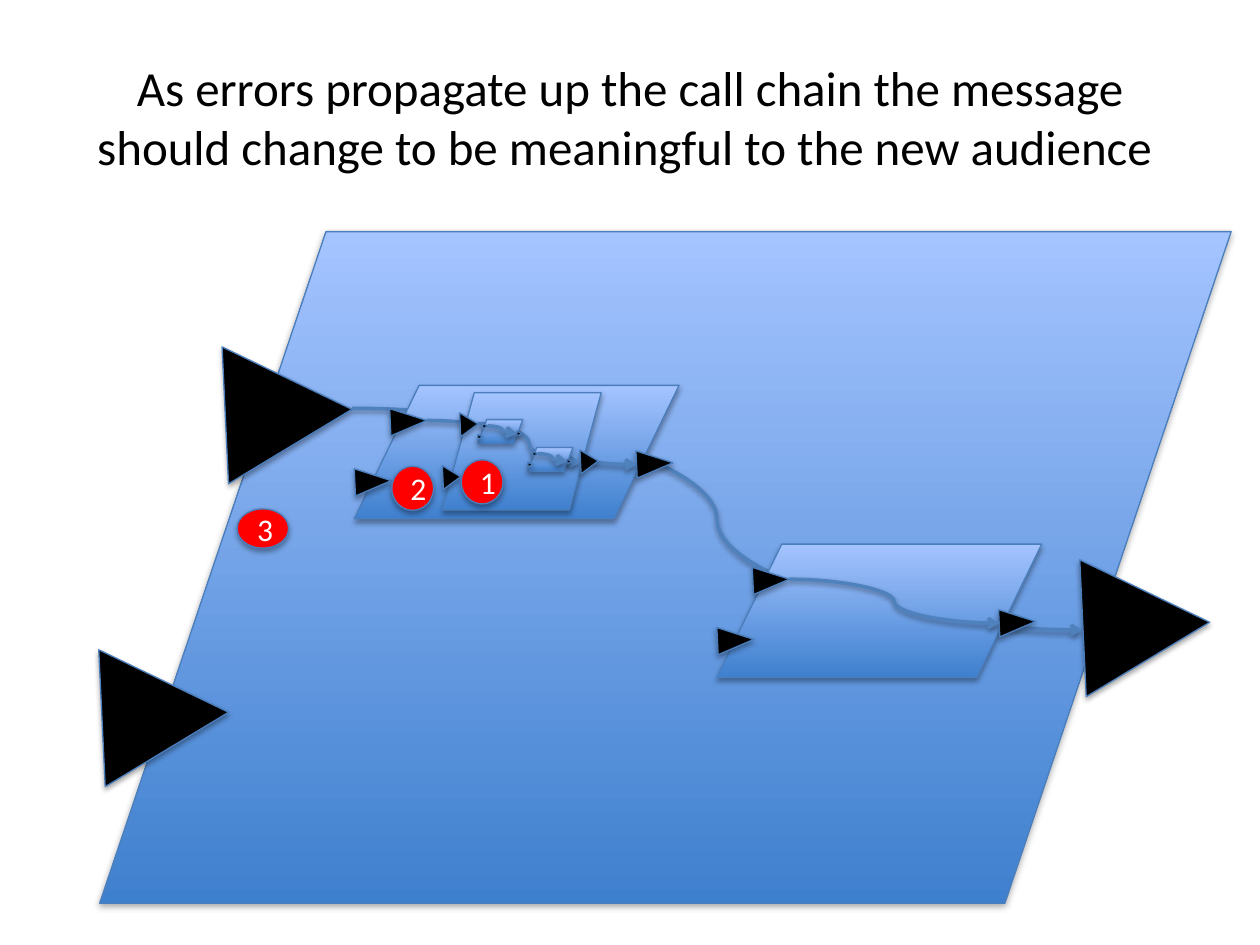
from lxml.etree import SubElement
from pptx import Presentation
from pptx.dml.color import RGBColor
from pptx.enum.shapes import MSO_CONNECTOR, MSO_SHAPE
from pptx.enum.text import MSO_ANCHOR, PP_ALIGN
from pptx.oxml.ns import qn
from pptx.util import Cm, Pt

FONT = "Calibri"
COLORS = {
    "text": "000000",
    "badge_text": "FFFFFF",
    "badge": "FF0000",
    "port": "000000",
    "block_bottom": "3F80CE",
    "block_top": "A4C4FF",
    "outline": "4B7EBC",
    "flow": "4F81BD",
    "shadow": "000000",
}

# Left, top, width and height in cm, from the outermost call inwards
CALL_BLOCKS = [
    (2.01, 4.67, 22.81, 13.54),
    (7.14, 7.77, 6.55, 2.69),
    (14.45, 10.97, 6.55, 2.69),
    (8.92, 7.92, 3.2, 2.36),
    (9.63, 8.46, 0.91, 0.48),
    (10.64, 9.02, 0.91, 0.48),
]
BADGES = [
    ("1", 9.3, 9.27, 0.84, 0.89),
    ("2", 7.9, 9.4, 0.84, 0.89),
    ("3", 4.78, 10.26, 1.04, 0.79),
]

# Fractions of the block that holds them
PORT_CENTERS = [(0.167, 0.269), (0.058, 0.72), (0.925, 0.586)]
PORT_WIDTH, PORT_HEIGHT = 0.112, 0.204
FLOW_START, FLOW_END = (0.223, 0.263), (0.868, 0.593)
PORT_ROTATION = 87.3


def color(name):
    return RGBColor.from_string(COLORS[name])


def add_shadow(properties, distance, opacity):
    """Put a soft shadow below the shape that owns these properties."""
    effects = properties.find(qn("a:effectLst"))
    if effects is None:
        effects = SubElement(properties, qn("a:effectLst"))
    shadow = SubElement(effects, qn("a:outerShdw"), blurRad=str(Pt(3.1)),
                        dist=str(Pt(distance)), dir="5400000", rotWithShape="0")
    shade = SubElement(shadow, qn("a:srgbClr"), val=COLORS["shadow"])
    SubElement(shade, qn("a:alpha"), val=str(opacity * 1000))


def add_outlined_shape(shapes, kind, left, top, width, height):
    shape = shapes.add_shape(kind, Cm(left), Cm(top), Cm(width), Cm(height))
    shape.line.color.rgb = color("outline")
    shape.line.width = Pt(0.75)
    shape.shadow.inherit = False
    add_shadow(shape.element.spPr, 1.8, 35)
    return shape


def fill_solid(shape, name):
    shape.fill.solid()
    shape.fill.fore_color.rgb = color(name)


def add_run(paragraph, text, size, color_name):
    paragraph.alignment = PP_ALIGN.CENTER
    run = paragraph.add_run()
    run.text = text
    run.font.name = FONT
    run.font.size = Pt(size)
    run.font.color.rgb = color(color_name)


def add_port(shapes, center_x, center_y, width, height):
    """Add a triangle that points right; its box is turned, so its sides swap."""
    port = add_outlined_shape(shapes, MSO_SHAPE.ISOSCELES_TRIANGLE,
                              center_x - height / 2, center_y - width / 2,
                              height, width)
    port.rotation = PORT_ROTATION
    fill_solid(port, "port")


def add_flow(shapes, start, end):
    flow = shapes.add_connector(MSO_CONNECTOR.CURVE, *map(Cm, start + end))
    flow.line.color.rgb = color("flow")
    flow.line.width = Pt(2)
    properties = flow.element.spPr
    SubElement(properties.find(qn("a:ln")), qn("a:tailEnd"), type="arrow")
    add_shadow(properties, 1.6, 38)


def add_call_block(slide, left, top, width, height):
    """Add a group of a block, its three ports and the flow through it."""
    def locate(fractions):
        return left + fractions[0] * width, top + fractions[1] * height

    shapes = slide.shapes.add_group_shape().shapes
    block = add_outlined_shape(shapes, MSO_SHAPE.FLOWCHART_DATA,
                               left, top, width, height)
    block.fill.gradient()
    block.fill.gradient_angle = 90
    for stop, name in zip(block.fill.gradient_stops, ("block_bottom", "block_top")):
        stop.color.rgb = color(name)
    for center in PORT_CENTERS:
        add_port(shapes, *locate(center), PORT_WIDTH * width, PORT_HEIGHT * height)
    add_flow(shapes, locate(FLOW_START), locate(FLOW_END))


def add_badge(slide, number, left, top, width, height):
    badge = add_outlined_shape(slide.shapes, MSO_SHAPE.OVAL, left, top, width, height)
    fill_solid(badge, "badge")
    badge.text_frame.vertical_anchor = MSO_ANCHOR.MIDDLE
    add_run(badge.text_frame.paragraphs[0], number, 18, "badge_text")


def set_title(slide, text):
    title = slide.shapes.title
    title.left, title.top = Cm(1.27), Cm(0.76)
    title.width, title.height = Cm(22.86), Cm(3.18)
    title.text_frame.vertical_anchor = MSO_ANCHOR.MIDDLE
    add_run(title.text_frame.paragraphs[0], text, 28, "text")


def main():
    presentation = Presentation()
    presentation.slide_width, presentation.slide_height = Cm(25.4), Cm(19.05)
    slide = presentation.slides.add_slide(presentation.slide_layouts[5])
    set_title(slide, "As errors propagate up the call chain the message "
                     "should change to be meaningful to the new audience ")
    for block in CALL_BLOCKS:
        add_call_block(slide, *block)
    for badge in BADGES:
        add_badge(slide, *badge)
    presentation.save("out.pptx")


if __name__ == "__main__":
    main()
